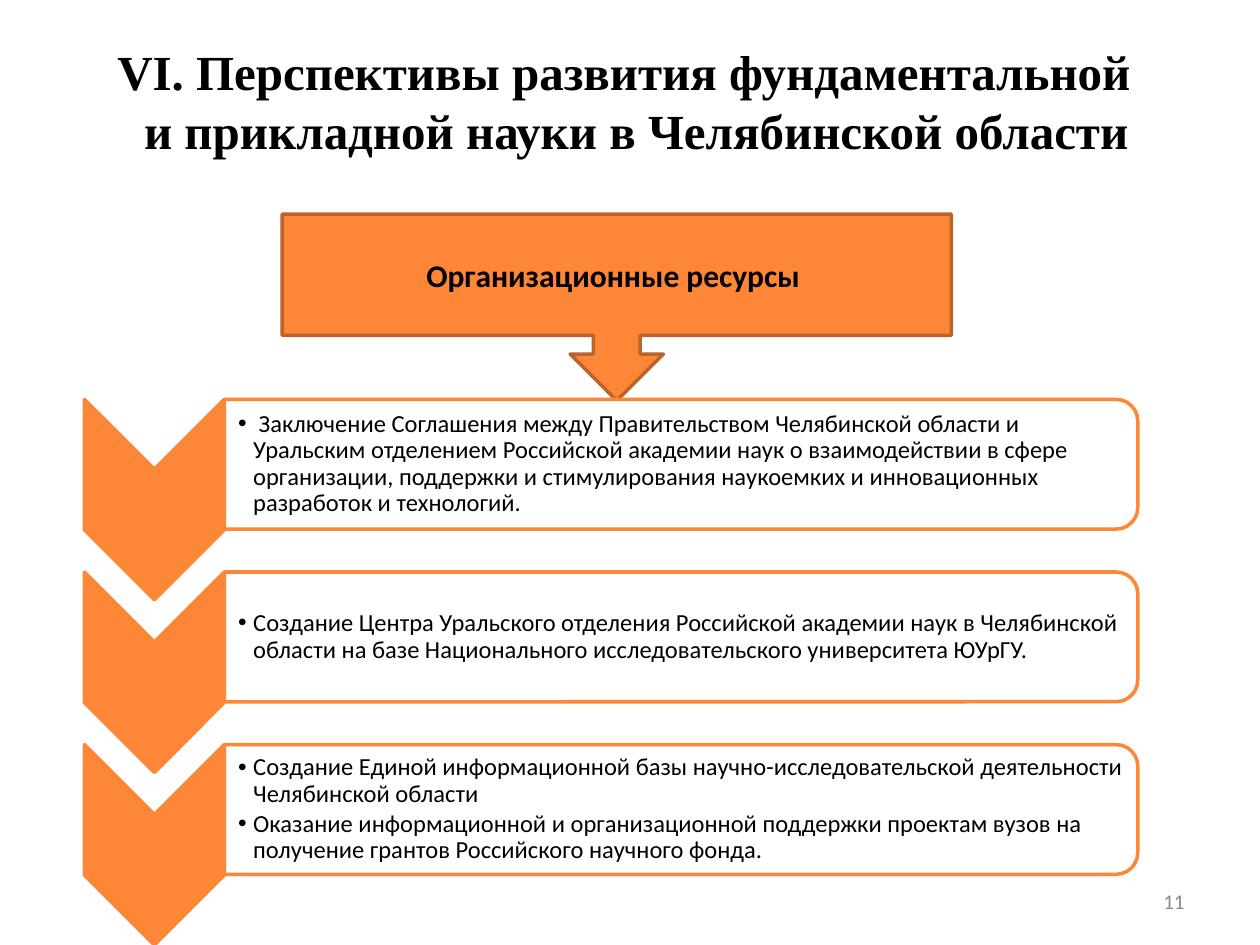
from pptx import Presentation
from pptx import util as u
from pptx.dml.color import RGBColor
from pptx.enum import shapes, text
from pptx.oxml.ns import qn
from lxml import etree

ORANGE, RUST, WHITE, BLACK, GREY = "FE8637", "BC6329", "FFFFFF", "000000", "898989"
KIND = shapes.MSO_SHAPE
ALIGN = text.PP_ALIGN

STEPS = [
    [" Заключение Соглашения между Правительством Челябинской области и "
     "Уральским отделением Российской академии наук о взаимодействии в сфере "
     "организации, поддержки и стимулирования наукоемких и инновационных "
     "разработок и технологий."],
    ["Создание Центра Уральского отделения Российской академии наук в "
     "Челябинской области на базе Национального исследовательского "
     "университета ЮУрГУ."],
    ["Создание Единой информационной базы научно-исследовательской "
     "деятельности Челябинской области",
     "Оказание информационной и организационной поддержки проектам вузов на "
     "получение грантов Российского научного фонда."],
]


def color(code):
    return RGBColor.from_string(code)


def place(box):
    return [u.Inches(n) for n in box]


def bullet(para, indent):
    props = para._p.get_or_add_pPr()
    props.set("marL", str(u.Inches(indent)))
    props.set("indent", str(-u.Inches(indent)))
    etree.SubElement(props, qn("a:buFont")).set("typeface", "Arial")
    etree.SubElement(props, qn("a:buChar")).set("char", "•")


class Deck:
    """Holds the slide and its text style."""

    def __init__(self, face):
        self.file = Presentation()
        self.file.slide_width, self.file.slide_height = u.Inches(10), u.Inches(7.5)
        self.slide = self.file.slides.add_slide(self.file.slide_layouts[5])
        self.face = face

    def style(self, para, size, align, ink=BLACK, bold=False, face=None):
        para.alignment = align
        font = para.font
        font.name, font.size, font.bold = face or self.face, u.Pt(size), bold
        font.color.rgb = color(ink)

    def title(self, words, box):
        head = self.slide.shapes.title
        head.left, head.top, head.width, head.height = place(box)
        frame = head.text_frame
        frame.auto_size = text.MSO_AUTO_SIZE.NONE
        frame.vertical_anchor = text.MSO_ANCHOR.MIDDLE
        frame.margin_top, frame.margin_bottom = u.Inches(0.2), 0
        frame.text = words
        self.style(frame.paragraphs[0], 28, ALIGN.CENTER, bold=True,
                   face="Times New Roman")

    def shape(self, kind, box, fill=ORANGE, line=ORANGE, turn=0):
        item = self.slide.shapes.add_shape(kind, *place(box))
        item.shadow.inherit = False
        item.fill.solid()
        item.fill.fore_color.rgb = color(fill)
        item.line.color.rgb = color(line)
        item.line.width = u.Pt(2)
        item.rotation = turn
        return item

    def label(self, box):
        """Add an empty, wrapping text box and return its frame."""
        frame = self.slide.shapes.add_textbox(*place(box)).text_frame
        frame.word_wrap = True
        frame.vertical_anchor = text.MSO_ANCHOR.MIDDLE
        return frame

    def number(self, words, box):
        para = self.label(box).paragraphs[0]
        para.text = words
        self.style(para, 12, ALIGN.RIGHT, GREY)

    def callout(self, words, box):
        item = self.shape(KIND.DOWN_ARROW_CALLOUT, box, line=RUST)
        para = item.text_frame.paragraphs[0]
        para.text = words
        self.style(para, 18, ALIGN.CENTER, bold=True)

    def points(self, items, box):
        frame = self.label(box)
        frame.margin_left = u.Inches(0.11)
        frame.margin_top = frame.margin_right = frame.margin_bottom = u.Inches(0.01)
        for i, words in enumerate(items):
            para = frame.add_paragraph() if i else frame.paragraphs[0]
            para.text = words
            bullet(para, 0.12)
            para.line_spacing, para.space_after = 0.9, u.Pt(2)
            self.style(para, 14, ALIGN.LEFT)

    def step(self, items, top):
        """Draw one chevron with its rounded panel, both turned sideways."""
        self.shape(KIND.CHEVRON, (0.43, top + 0.24, 1.59, 1.11), turn=90)
        self.shape(KIND.ROUND_2_SAME_RECTANGLE, (4.89, top - 3.11, 1.03, 7.25),
                   fill=WHITE, turn=90)
        self.points(items, (1.78, top + 0.05, 7.2, 0.93))


def main():
    deck = Deck("Calibri")
    deck.title("VI. Перспективы развития фундаментальной \v"
               " и прикладной науки в Челябинской области", (0.5, 0.3, 9, 0.79))
    deck.number("11", (7.17, 6.95, 2.33, 0.4))
    deck.callout("Организационные ресурсы ", (2.24, 1.7, 5.31, 1.48))
    for i, items in enumerate(STEPS):
        deck.step(items, 3.17 + 1.37 * i)
    deck.file.save("out.pptx")


if __name__ == "__main__":
    main()
